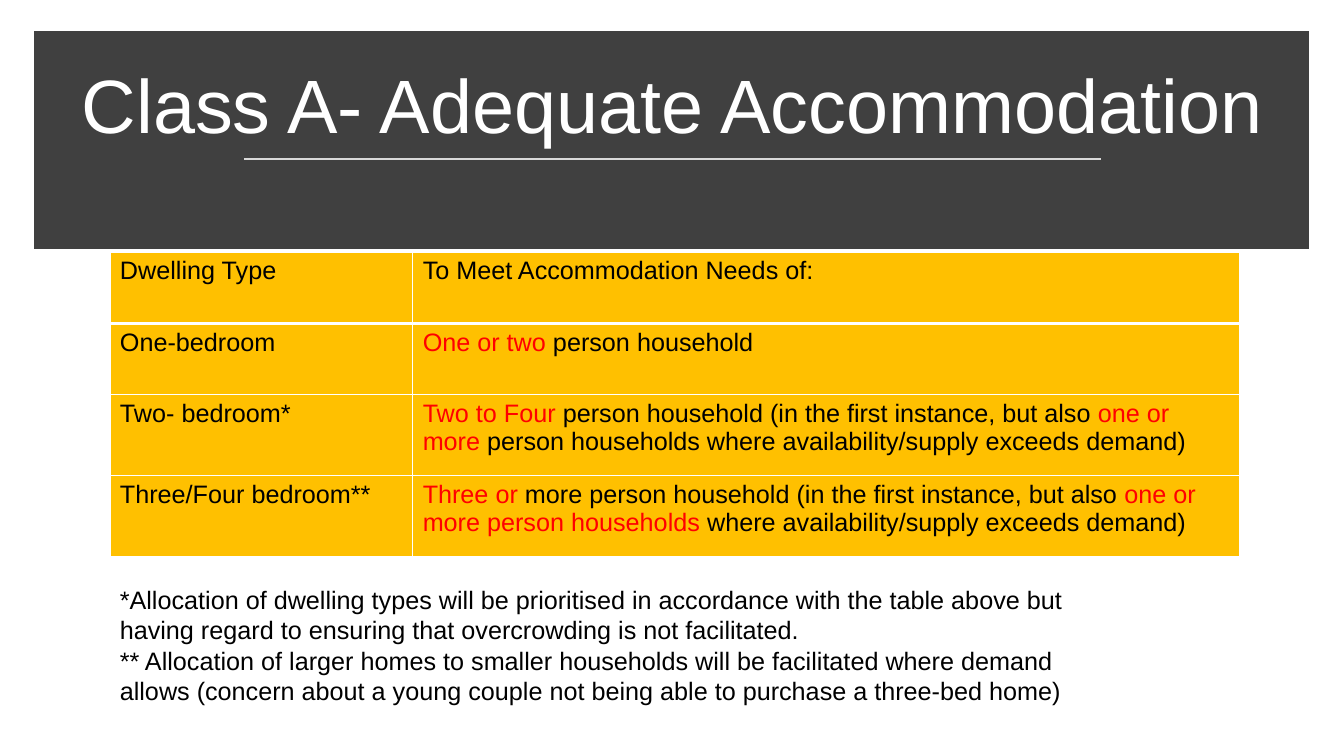
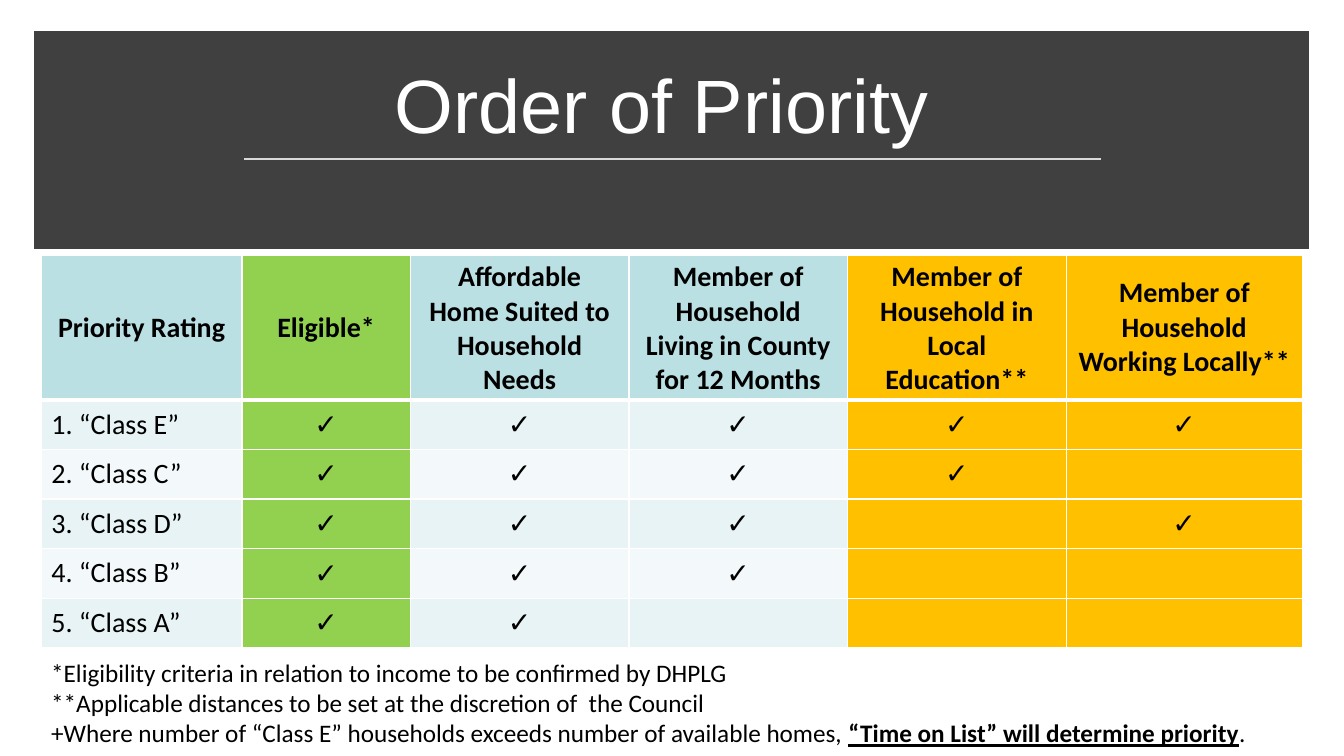
from dataclasses import dataclass, field
from typing import Any, NamedTuple

from lxml import etree
from pptx import Presentation
from pptx.dml.color import RGBColor
from pptx.enum.shapes import MSO_CONNECTOR, MSO_SHAPE
from pptx.enum.text import MSO_ANCHOR, PP_ALIGN
from pptx.oxml.ns import qn
from pptx.util import Cm, Pt

RECTANGLE, STRAIGHT = MSO_SHAPE.RECTANGLE, MSO_CONNECTOR.STRAIGHT
TOP, MIDDLE, BOTTOM = MSO_ANCHOR.TOP, MSO_ANCHOR.MIDDLE, MSO_ANCHOR.BOTTOM
LEFT, CENTER = PP_ALIGN.LEFT, PP_ALIGN.CENTER

# Colours
CHARCOAL = RGBColor(0x40, 0x40, 0x40)
RULE_GREY = RGBColor(0xD9, 0xD9, 0xD9)
WHITE = RGBColor(0xFF, 0xFF, 0xFF)
BLACK = RGBColor(0x00, 0x00, 0x00)
RED = RGBColor(0xFF, 0x00, 0x00)
AMBER = RGBColor(0xFF, 0xC0, 0x00)
GREEN = RGBColor(0x92, 0xD0, 0x50)
TEAL = RGBColor(0xBB, 0xE0, 0xE3)
STRIPES = (RGBColor(0xE7, 0xF3, 0xF4), RGBColor(0xF3, 0xF9, 0xFA))

# Text formats
TITLE = {"name": "Arial", "size": Pt(54)}
ARIAL = {"name": "Arial", "size": Pt(18), "bold": False}
CALIBRI = {"name": "Calibri", "size": Pt(18), "bold": False}
CLASS_NAME = CALIBRI | {"size": Pt(20)}
HEADING = CLASS_NAME | {"bold": True}
TICK = CLASS_NAME | {"name": "Arial"}
STRESSED = {"bold": True, "underline": True}


class Run(NamedTuple):
    text: str
    color: RGBColor = BLACK
    extra: dict[str, Any] = {}


class Box(NamedTuple):
    """Left, top, width and height in centimetres."""
    left: float
    top: float
    width: float
    height: float


Paragraph = list[Run]


@dataclass
class CellText:
    runs: Paragraph
    fill: RGBColor
    style: dict[str, Any] = field(default_factory=lambda: ARIAL)
    align: Any = LEFT
    anchor: Any = TOP


# Slide content
BAND = Box(1.04, 0.97, 31.78, 5.13)
TITLE_BOX = Box(1.47, 1.3, 30.94, 2.59)
RULE_LEFT, RULE_RIGHT, RULE_TOP = 6.15, 27.74, 4.01
THIN, THICK = 1, 3

DWELLINGS: list[tuple[str, Paragraph]] = [
    ("Dwelling Type", [Run("To Meet Accommodation Needs of:")]),
    ("One-bedroom", [Run("One or two ", RED), Run("person household")]),
    ("Two- bedroom*", [
        Run("Two to Four ", RED),
        Run("person household (in the first instance, but also "),
        Run("one or more ", RED),
        Run("person households where availability/supply exceeds demand)")]),
    ("Three/Four bedroom**", [
        Run("Three or ", RED),
        Run("more person household (in the first instance, but also "),
        Run("one or more person households ", RED),
        Run("where availability/supply exceeds demand)")]),
]
DWELLING_NOTES: list[Paragraph] = [
    [Run("*Allocation of dwelling types will be prioritised in accordance with the "
         "table above but having regard to ensuring that overcrowding is not "
         "facilitated.")],
    [Run("** Allocation of larger homes to smaller households will be facilitated "
         "where demand allows (concern about a young couple not being able to "
         "purchase a three-bed home)")],
]

CRITERIA = [
    ("Priority Rating", TEAL),
    ("Eligible*", GREEN),
    ("Affordable Home Suited to Household Needs", TEAL),
    ("Member of Household Living in County for 12 Months", TEAL),
    ("Member of Household in Local Education**", AMBER),
    ("Member of Household Working Locally**", AMBER),
]
# Class and the criteria it meets, one mark per column
RATINGS = [
    ("1. “Class E”", "✓✓✓✓✓"),
    ("2. “Class C”", "✓✓✓✓-"),
    ("3. “Class D”", "✓✓✓-✓"),
    ("4. “Class B”", "✓✓✓--"),
    ("5. “Class A”", "✓✓---"),
]
PRIORITY_NOTES: list[Paragraph] = [
    [Run("*Eligibility criteria in relation to income to be confirmed by DHPLG")],
    [Run("**Applicable distances to be set at the discretion of  the Council")],
    [Run("+Where number of “Class E” households exceeds number of available homes, "),
     Run("“Time on List” will determine priority", BLACK, STRESSED), Run(".")],
]


def write_runs(paragraph, runs: Paragraph, style: dict[str, Any]) -> None:
    for part in runs:
        run = paragraph.add_run()
        run.text = part.text
        for name, value in (style | part.extra).items():
            setattr(run.font, name, value)
        run.font.color.rgb = part.color


def add_text(slide, box: Box, paragraphs: list[Paragraph], style: dict[str, Any],
             anchor=TOP, **layout) -> None:
    frame = slide.shapes.add_textbox(*map(Cm, box)).text_frame
    frame.word_wrap = True
    frame.vertical_anchor = anchor
    for index, runs in enumerate(paragraphs):
        paragraph = frame.add_paragraph() if index else frame.paragraphs[0]
        for name, value in layout.items():
            setattr(paragraph, name, value)
        write_runs(paragraph, runs, style)


def add_header(slide, title: str) -> None:
    """Dark band, title and the rule below it."""
    band = slide.shapes.add_shape(RECTANGLE, *map(Cm, BAND))
    band.shadow.inherit = False
    band.fill.solid()
    band.fill.fore_color.rgb = CHARCOAL
    band.line.color.rgb = CHARCOAL
    band.line.width = Pt(10)
    etree.SubElement(band.line._get_or_add_ln(), qn("a:miter"), lim="800000")

    add_text(slide, TITLE_BOX, [[Run(title, WHITE)]], TITLE, BOTTOM,
             alignment=CENTER, line_spacing=0.9)

    rule = slide.shapes.add_connector(
        STRAIGHT, Cm(RULE_LEFT), Cm(RULE_TOP), Cm(RULE_RIGHT), Cm(RULE_TOP))
    rule.line.color.rgb = RULE_GREY
    rule.line.width = Pt(1.75)
    etree.SubElement(rule._element.spPr, qn("a:effectLst"))


def set_borders(cell, widths: dict[str, float]) -> None:
    """White borders, placed ahead of the fill as the schema requires."""
    properties = cell._tc.get_or_add_tcPr()
    for index, (side, width) in enumerate(widths.items()):
        border = etree.Element(qn(f"a:ln{side}"), w=str(Pt(width)))
        fill = etree.SubElement(border, qn("a:solidFill"))
        etree.SubElement(fill, qn("a:srgbClr"), val=str(WHITE))
        properties.insert(index, border)


def add_grid(slide, left: float, top: float, widths: list[float],
             heights: list[float], rows: list[list[CellText]]) -> None:
    table = slide.shapes.add_table(
        len(rows), len(widths), Cm(left), Cm(top),
        Cm(sum(widths)), Cm(sum(heights))).table
    table.first_row = table.horz_banding = False
    for column, width in zip(table.columns, widths):
        column.width = Cm(width)
    for row_index, (row, height) in enumerate(zip(rows, heights)):
        table.rows[row_index].height = Cm(height)
        for column_index, content in enumerate(row):
            cell = table.cell(row_index, column_index)
            cell.fill.solid()
            cell.fill.fore_color.rgb = content.fill
            cell.vertical_anchor = content.anchor
            paragraph = cell.text_frame.paragraphs[0]
            paragraph.alignment = content.align
            write_runs(paragraph, content.runs, content.style)
            set_borders(cell, {"L": THIN, "R": THIN,
                               "T": THICK if row_index == 1 else THIN,
                               "B": THICK if row_index == 0 else THIN})


def rating_row(index: int, name: str, marks: str) -> list[CellText]:
    fills = [STRIPES[index % 2] if fill == TEAL else fill for _, fill in CRITERIA]
    cells = [CellText([Run(name)], fills[0], CLASS_NAME, LEFT, MIDDLE)]
    for mark, fill in zip(marks, fills[1:]):
        runs = [Run(mark)] if mark == "✓" else []
        cells.append(CellText(runs, fill, TICK, CENTER, MIDDLE))
    return cells


def build_accommodation(slide) -> None:
    add_header(slide, "Class A- Adequate Accommodation")
    rows = [[CellText([Run(dwelling)], AMBER), CellText(needs, AMBER)]
            for dwelling, needs in DWELLINGS]
    add_grid(slide, 2.77, 6.35, [7.63, 20.84], [1.8, 1.8, 2.04, 2.04], rows)
    add_text(slide, Box(2.77, 14.6, 25.45, 4.11), DWELLING_NOTES, ARIAL)


def build_priority(slide) -> None:
    add_header(slide, "Order of Priority ")
    headings = [CellText([Run(name)], fill, HEADING, CENTER, MIDDLE)
                for name, fill in CRITERIA]
    ratings = [rating_row(index, *rating) for index, rating in enumerate(RATINGS)]
    add_grid(slide, 1.04, 6.43, [5.06, 4.24, 5.51, 5.51, 5.51, 5.95],
             [3.56] + [1.25] * len(RATINGS), [headings] + ratings)
    add_text(slide, Box(1.04, 16.43, 31.78, 2.57), PRIORITY_NOTES, CALIBRI)


def main() -> None:
    deck = Presentation()
    deck.slide_width, deck.slide_height = Cm(33.87), Cm(19.05)
    blank = deck.slide_layouts[6]
    for build in (build_accommodation, build_priority):
        build(deck.slides.add_slide(blank))
    deck.save("out.pptx")


if __name__ == "__main__":
    main()
